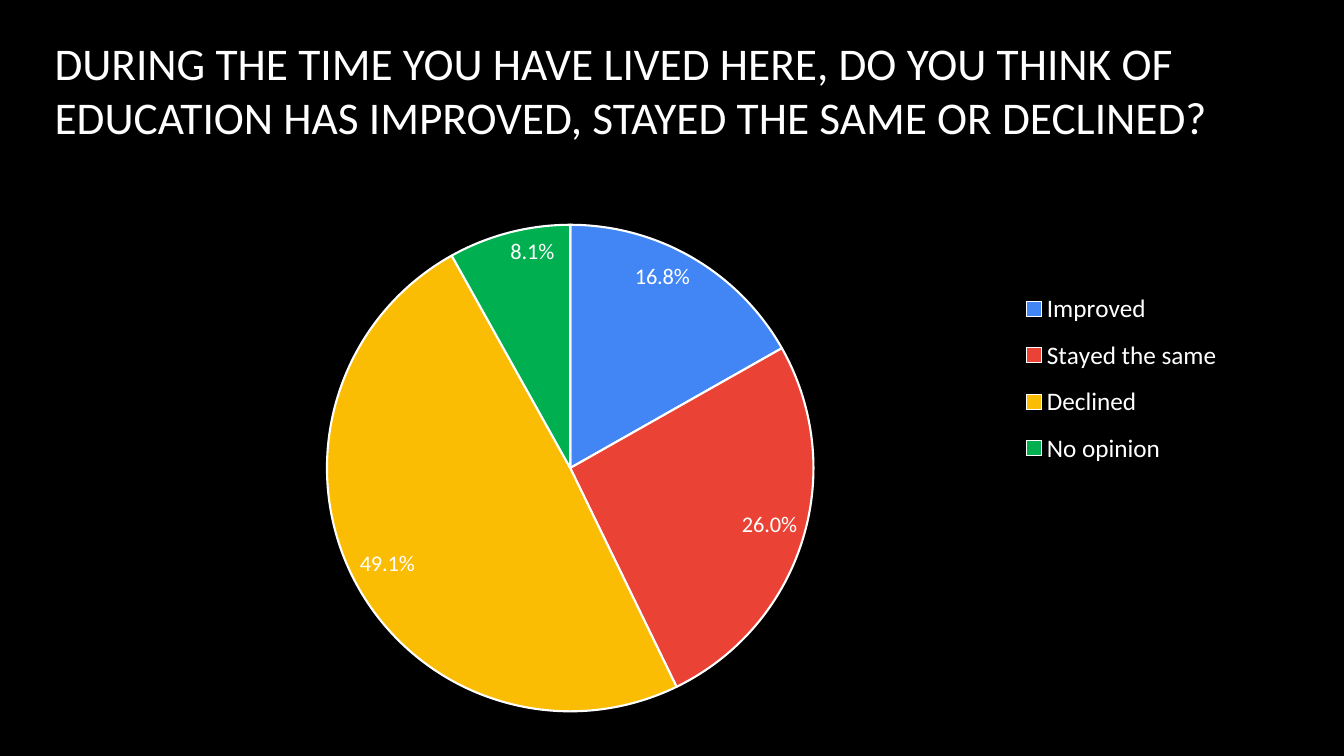
"""Build a survey slide with a pie chart of views on education."""
import pptx
import pptx.chart.data
import pptx.dml.color
import pptx.enum.chart
import pptx.enum.text
import pptx.oxml
import pptx.oxml.ns
import pptx.util

Cm = pptx.util.Cm
Pt = pptx.util.Pt
RGBColor = pptx.dml.color.RGBColor

BLACK = RGBColor(0x00, 0x00, 0x00)
WHITE = RGBColor(0xFF, 0xFF, 0xFF)
BLUE = RGBColor(0x42, 0x85, 0xF4)
RED = RGBColor(0xEA, 0x43, 0x35)
YELLOW = RGBColor(0xFB, 0xBC, 0x04)
GREEN = RGBColor(0x00, 0xB0, 0x50)

TITLE = ("DURING THE TIME YOU HAVE LIVED HERE, DO YOU THINK OF EDUCATION "
         "HAS IMPROVED, STAYED THE SAME OR DECLINED?")
VIEWS = [
    ("Improved", 16.8, BLUE),
    ("Stayed the same", 26.0, RED),
    ("Declined", 49.1, YELLOW),
    ("No opinion", 8.1, GREEN),
]


class Deck:
    """Hold the style and the current slide."""

    def __init__(self, face, ink):
        """Start a wide deck with one font face and ink colour."""
        self.face, self.ink = face, ink
        self.file = pptx.Presentation()
        self.file.slide_width, self.file.slide_height = Cm(33.87), Cm(19.05)
        self.slide = None

    def page(self, color):
        """Add a title-only slide with a plain background."""
        self.slide = self.file.slides.add_slide(self.file.slide_layouts[5])
        fill = self.slide.background.fill
        fill.solid()
        fill.fore_color.rgb = color

    def style(self, font, size):
        """Give a font the face and ink of the deck."""
        font.name, font.size = self.face, Pt(size)
        font.color.rgb = self.ink

    def title(self, text, box, size):
        """Place and format the title."""
        shape = self.slide.shapes.title
        shape.left, shape.top, shape.width, shape.height = map(Cm, box)
        frame = shape.text_frame
        frame.text = text
        frame.word_wrap = True
        frame.auto_size = pptx.enum.text.MSO_AUTO_SIZE.NONE
        frame.vertical_anchor = pptx.enum.text.MSO_ANCHOR.MIDDLE
        para = frame.paragraphs[0]
        para.alignment = pptx.enum.text.PP_ALIGN.LEFT
        self.style(para.runs[0].font, size)

    def pie(self, views, box, plot, key):
        """Add a pie with percent labels and a legend at the right."""
        data = pptx.chart.data.CategoryChartData()
        data.categories = [name for name, _, _ in views]
        data.add_series("Series 1", [value for _, value, _ in views])
        kind = pptx.enum.chart.XL_CHART_TYPE.PIE
        chart = self.slide.shapes.add_chart(kind, *map(Cm, box), data).chart
        chart.has_title = False
        self.style(chart.font, 10)
        pie = chart.plots[0]
        pie.vary_by_categories = True
        for index, (_, _, color) in enumerate(views):
            form = pie.series[0].points[index].format
            form.fill.solid()
            form.fill.fore_color.rgb = color
            form.line.color.rgb = self.ink
            form.line.width = Pt(1.5)
        labels = pie.series[0].data_labels
        labels.show_percentage = True
        labels.show_value = False
        labels.number_format = "0.0%"
        labels.number_format_is_linked = False
        labels.position = pptx.enum.chart.XL_LABEL_POSITION.INSIDE_END
        self.style(labels.font, 16)
        chart.has_legend = True
        chart.legend.position = pptx.enum.chart.XL_LEGEND_POSITION.RIGHT
        chart.legend.include_in_layout = False
        self.style(chart.legend.font, 18)
        self.fix(chart, "c:plotArea", 0, plot)
        self.fix(chart, "c:legend", 1, key)

    def fix(self, chart, tag, spot, box):
        """Set the layout of a chart part as shares of the chart."""
        qn = pptx.oxml.ns.qn
        part = next(chart.element.iter(qn(tag)))
        for old in part.findall(qn("c:layout")):
            part.remove(old)
        sizes = "".join(f'<c:{n} val="{v}"/>' for n, v in zip("xywh", box))
        inner = '<c:layoutTarget val="inner"/>' if tag == "c:plotArea" else ""
        part.insert(spot, pptx.oxml.parse_xml(
            f'<c:layout {pptx.oxml.ns.nsdecls("c")}><c:manualLayout>{inner}'
            '<c:xMode val="edge"/><c:yMode val="edge"/>'
            f'{sizes}</c:manualLayout></c:layout>'))


def main():
    """Build and save the slide."""
    deck = Deck("Calibri", WHITE)
    deck.page(BLACK)
    deck.title(TITLE, (1.12, 0.23, 32.2, 4.04), 32.4)
    deck.pie(VIEWS, (1.12, 4.6, 31.93, 13.72),
             plot=(0.223, 0.077, 0.384, 0.895),
             key=(0.76, 0.175, 0.18, 0.37))
    deck.file.save("out.pptx")


if __name__ == "__main__":
    main()
